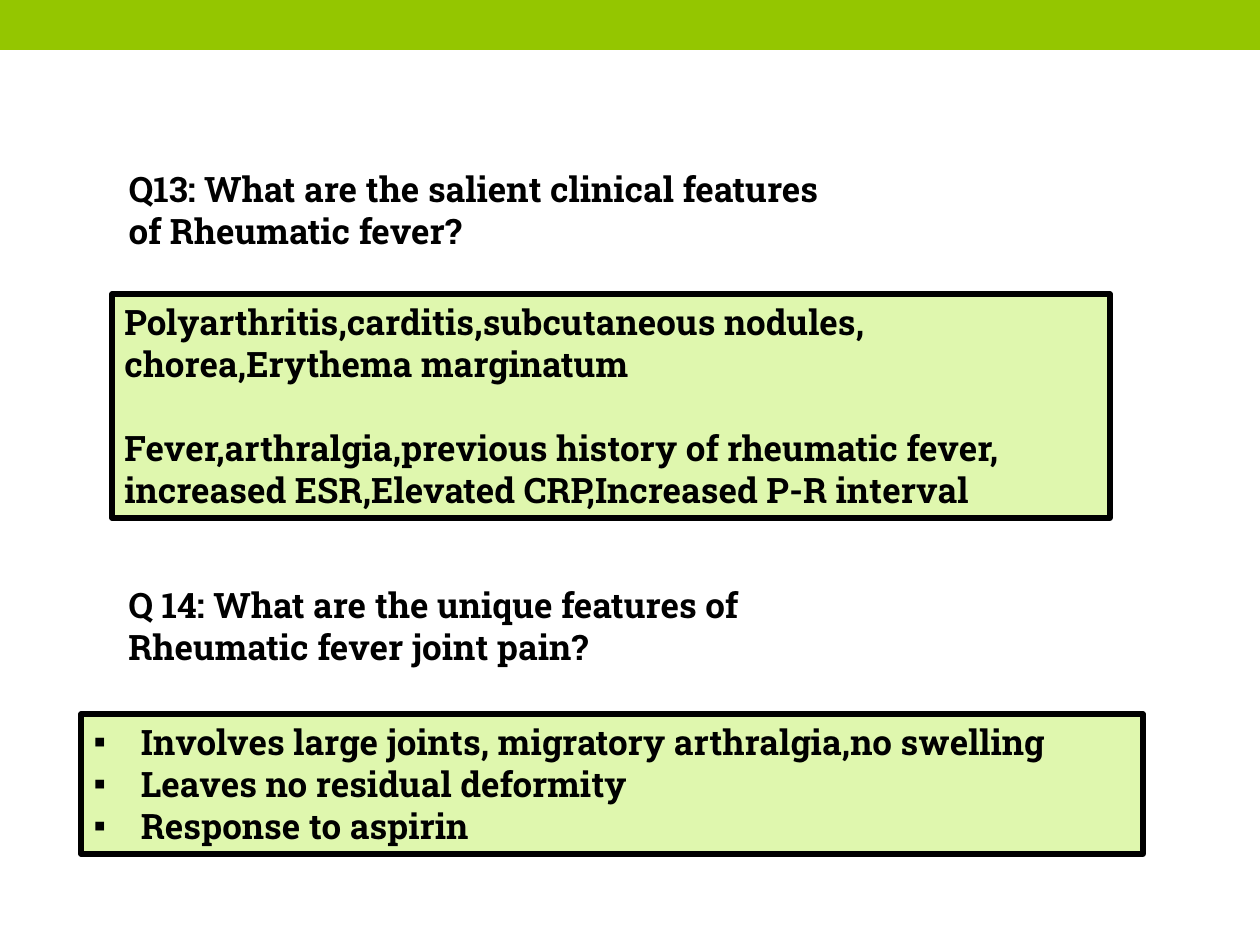
from lxml import etree
from pptx import Presentation
from pptx import util as u
from pptx.dml.color import RGBColor
from pptx.enum import shapes, text
from pptx.oxml.ns import qn

PX = u.Inches(1) / 126
HUES = {"bar": "94C600", "box": "DFF7AE", "ink": "000000"}


def px(n):
    return u.Emu(round(n * PX))


def hue(name):
    return RGBColor.from_string(HUES[name])


class Deck:
    font = "Roboto Slab"
    size = u.Pt(20)
    edge = u.Pt(3)

    def __init__(self, slide):
        self.slide = slide

    def place(self, shape, left, top, width, height):
        shape.left, shape.top = px(left), px(top)
        shape.width, shape.height = px(width), px(height)

    def letter(self, shape, lines, bullet=None, gaps=()):
        """Fill a shape with paragraphs; gaps lists those set one line lower."""
        frame = shape.text_frame
        frame.text = "\n".join(lines)
        frame.word_wrap = True
        frame.auto_size = text.MSO_AUTO_SIZE.NONE
        frame.vertical_anchor = text.MSO_ANCHOR.TOP
        for i, para in enumerate(frame.paragraphs):
            if bullet:
                mark = etree.SubElement(para._p.get_or_add_pPr(), qn("a:buChar"))
                mark.set("char", bullet)
            para.alignment = text.PP_ALIGN.LEFT
            para.space_before = u.Pt(24 if i in gaps else 0)
            para.font.name = self.font
            para.font.size = self.size
            para.font.bold = True
            para.font.color.rgb = hue("ink")

    def frame(self, shape):
        shape.fill.solid()
        shape.fill.fore_color.rgb = hue("box")
        shape.line.color.rgb = hue("ink")
        shape.line.width = self.edge

    def rect(self, *area):
        shape = self.slide.shapes.add_shape(
            shapes.MSO_SHAPE.RECTANGLE, *map(px, area))
        shape.shadow.inherit = False
        return shape

    def bar(self, *area):
        shape = self.rect(*area)
        shape.fill.solid()
        shape.fill.fore_color.rgb = hue("bar")
        shape.line.fill.background()

    def title(self, lines, *area):
        shape = self.slide.shapes.title
        self.place(shape, *area)
        self.letter(shape, lines)

    def label(self, lines, *area):
        shape = self.slide.shapes.add_textbox(*map(px, area))
        self.letter(shape, lines)

    def panel(self, lines, gaps, *area):
        shape = self.rect(*area)
        self.frame(shape)
        self.letter(shape, lines, gaps=gaps)

    def list(self, lines, *area):
        shape = self.slide.placeholders[1]
        self.place(shape, *area)
        self.frame(shape)
        self.letter(shape, lines, bullet="▪")


def main():
    show = Presentation()
    show.slide_width, show.slide_height = px(1260), px(945)
    deck = Deck(show.slides.add_slide(show.slide_layouts[1]))

    deck.bar(0, 0, 1260, 50)
    deck.title(["Q13: What are the salient clinical features",
                "of Rheumatic fever?"], 116, 161, 818, 97)
    deck.panel(["Polyarthritis,carditis,subcutaneous nodules,",
                "chorea,Erythema marginatum",
                "Fever,arthralgia,previous history of rheumatic fever,",
                "increased ESR,Elevated CRP,Increased P-R interval"],
               [2], 112, 294, 998, 224)
    deck.label(["Q 14: What are the unique features of",
                "Rheumatic fever joint pain?"], 116, 577, 731, 97)
    deck.list(["Involves large joints, migratory arthralgia,no swelling",
               "Leaves no residual deformity",
               "Response to aspirin"], 81, 714, 1062, 140)
    show.save("out.pptx")


if __name__ == "__main__":
    main()
